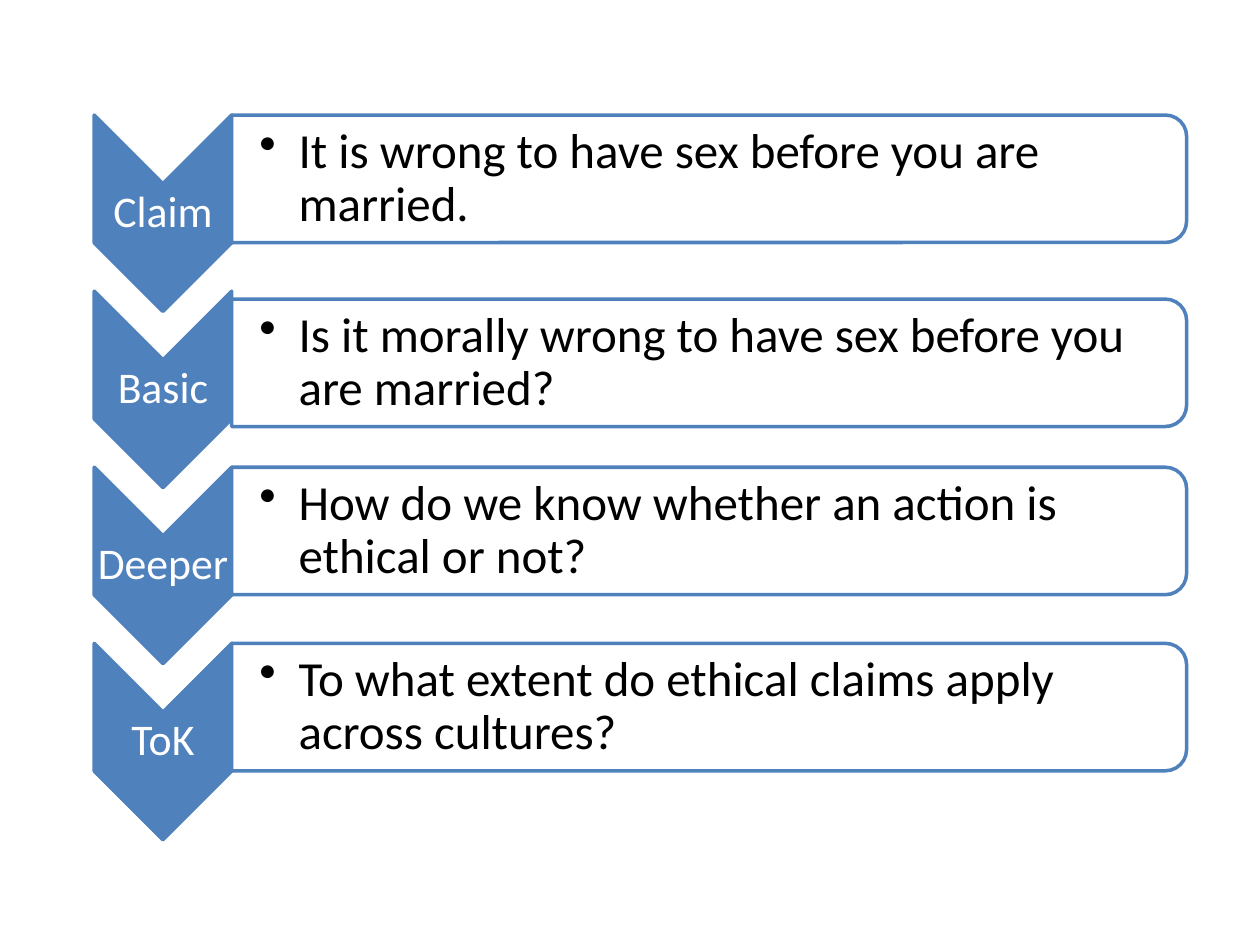
from lxml.etree import SubElement
from pptx import Presentation
from pptx.dml.color import RGBColor
from pptx.enum.shapes import MSO_SHAPE
from pptx.enum.text import MSO_ANCHOR, PP_ALIGN
from pptx.oxml.ns import qn
from pptx.util import Cm, Pt

BLUE = RGBColor(0x4F, 0x81, 0xBD)
WHITE = RGBColor(0xFF, 0xFF, 0xFF)
BLACK = RGBColor(0x00, 0x00, 0x00)

LEFT, TOP, PITCH = 1.9, 2.32, 3.55
CHEVRON_WIDTH, CHEVRON_HEIGHT = 2.77, 3.96
BAR_WIDTH, BAR_HEIGHT = 19.25, 2.57

ROWS = [
    ("Claim", "It is wrong to have sex before you are married.", 0),
    ("Basic", "Is it morally wrong to have sex before you are married?", 0.16),
    ("Deeper", "How do we know whether an action is ethical or not?", 0),
    ("ToK", "To what extent do ethical claims apply across cultures?", 0),
]


def add_turned_shape(slide, preset, left, top, width, height, color):
    shape = slide.shapes.add_shape(
        preset,
        Cm(left + (width - height) / 2),
        Cm(top + (height - width) / 2),
        Cm(height),
        Cm(width),
    )
    shape.rotation = 90
    shape.shadow.inherit = False
    shape.fill.solid()
    shape.fill.fore_color.rgb = color
    shape.line.color.rgb = BLUE
    shape.line.width = Pt(2)
    return shape


def add_text(slide, left, top, width, height, text, size, color, inset=0.05):
    box = slide.shapes.add_textbox(Cm(left), Cm(top), Cm(width), Cm(height))
    frame = box.text_frame
    frame.word_wrap = True
    frame.vertical_anchor = MSO_ANCHOR.MIDDLE
    frame.margin_left = Cm(inset)
    frame.margin_top = frame.margin_right = frame.margin_bottom = Cm(0.05)
    paragraph = frame.paragraphs[0]
    paragraph.text = text
    paragraph.line_spacing = 0.9
    paragraph.font.name = "Calibri"
    paragraph.font.size = Pt(size)
    paragraph.font.color.rgb = color
    return paragraph


def add_bullet(paragraph, indent):
    properties = paragraph._p.get_or_add_pPr()
    properties.set("marL", str(Cm(indent)))
    properties.set("indent", str(-Cm(indent)))
    bullet = SubElement(properties, qn("a:buChar"))
    bullet.set("char", "•")
    properties.append(properties.find(qn("a:defRPr")))


def add_step(slide, left, top, label):
    add_turned_shape(slide, MSO_SHAPE.CHEVRON, left, top,
                     CHEVRON_WIDTH, CHEVRON_HEIGHT, BLUE)
    paragraph = add_text(slide, left, top + CHEVRON_WIDTH / 2, CHEVRON_WIDTH,
                         CHEVRON_HEIGHT - CHEVRON_WIDTH, label, 25, WHITE)
    paragraph.alignment = PP_ALIGN.CENTER


def add_question(slide, left, top, text):
    bar = add_turned_shape(slide, MSO_SHAPE.ROUND_2_SAME_RECTANGLE, left, top,
                           BAR_WIDTH, BAR_HEIGHT, WHITE)
    color = bar.fill._xPr.find(qn("a:solidFill"))[0]
    SubElement(color, qn("a:alpha")).set("val", "90000")
    paragraph = add_text(slide, left, top + 0.13, BAR_WIDTH - 0.13,
                         BAR_HEIGHT - 0.26, text, 28, BLACK, inset=0.56)
    add_bullet(paragraph, 0.79)


def main():
    presentation = Presentation()
    presentation.slide_width = Cm(25.4)
    presentation.slide_height = Cm(19.05)
    slide = presentation.slides.add_slide(presentation.slide_layouts[6])
    for index, (label, text, shift) in enumerate(ROWS):
        top = TOP + index * PITCH
        add_step(slide, LEFT, top, label)
        add_question(slide, LEFT + CHEVRON_WIDTH, top + shift, text)
    presentation.save("out.pptx")


if __name__ == "__main__":
    main()
